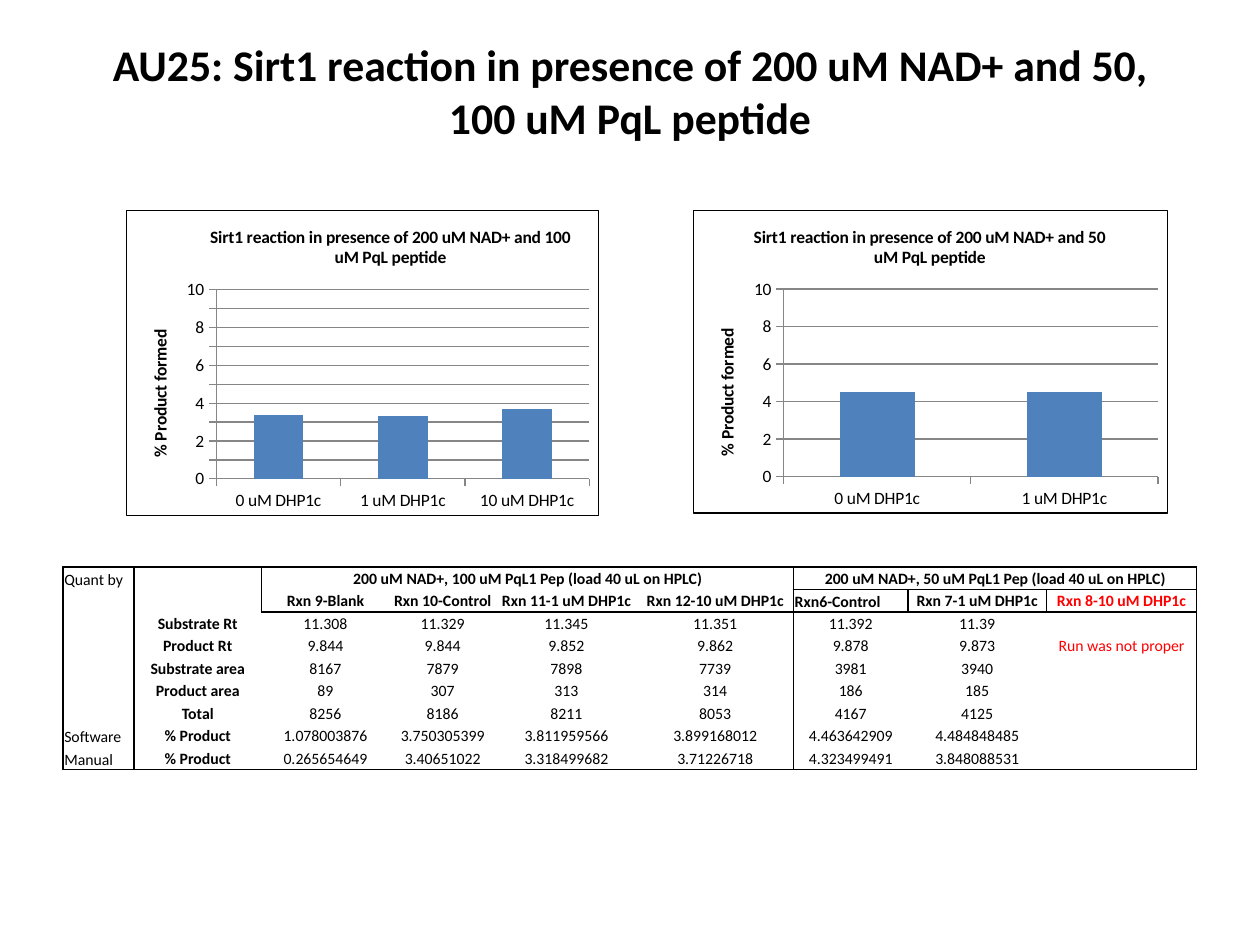
from lxml.etree import SubElement
from pptx import Presentation
from pptx.chart.data import CategoryChartData
from pptx.dml.color import RGBColor
from pptx.enum.chart import XL_CHART_TYPE, XL_TICK_MARK
from pptx.enum.text import MSO_ANCHOR, PP_ALIGN
from pptx.oxml import parse_xml
from pptx.oxml.ns import nsdecls, qn
from pptx.util import Pt

COLORS = {"text": "000000", "alert": "FF0000", "bar": "4F81BD", "grid": "868686"}
PLAIN_TABLE_STYLE = "{2D5ABB26-0587-4C30-8999-92F81FD0307C}"


def set_all(target, values):
    for name, value in values.items():
        setattr(target, name, value)


def set_layout(element, **fractions):
    """Place a chart part by fractions of the chart area."""
    layout = element.find(qn("c:layout"))
    if layout is None:
        layout = parse_xml(f"<c:layout {nsdecls('c')}/>")
        element.insert(0, layout)
    manual = SubElement(layout, qn("c:manualLayout"))
    if "w" in fractions:
        SubElement(manual, qn("c:layoutTarget")).set("val", "inner")
    for name in ("x", "y"):
        SubElement(manual, qn(f"c:{name}Mode")).set("val", "edge")
    for name, value in fractions.items():
        SubElement(manual, qn(f"c:{name}")).set("val", str(value))


def box_edges(boxes):
    """Grid positions of the vertical and horizontal lines around the boxes."""
    vertical, horizontal = set(), set()
    for top, first, bottom, last in boxes:
        vertical |= {(r, c) for r in range(top, bottom + 1) for c in (first, last + 1)}
        horizontal |= {(r, c) for r in (top, bottom + 1) for c in range(first, last + 1)}
    return vertical, horizontal


class SlideBuilder:
    font_name = "Calibri"

    def __init__(self, presentation):
        self.slide = presentation.slides.add_slide(presentation.slide_layouts[5])

    def style(self, font, size, bold=False, color="text"):
        set_all(font, {"name": self.font_name, "size": Pt(size), "bold": bold})
        font.color.rgb = RGBColor.from_string(COLORS[color])

    def title(self, text, left, top, width, height):
        shape = self.slide.shapes.title
        set_all(shape, {"left": Pt(left), "top": Pt(top),
                        "width": Pt(width), "height": Pt(height)})
        frame = shape.text_frame
        frame.text = text
        set_all(frame, {"word_wrap": True, "vertical_anchor": MSO_ANCHOR.MIDDLE,
                        "margin_bottom": Pt(33.6)})
        paragraph = frame.paragraphs[0]
        paragraph.alignment = PP_ALIGN.CENTER
        self.style(paragraph.runs[0].font, 25, bold=True)

    def chart_text(self, title, text):
        title.text_frame.text = text
        self.style(title.text_frame.paragraphs[0].runs[0].font, 10, bold=True)

    def column_chart(self, heading, heading_x, values, left, top, width, height, step=None):
        data = CategoryChartData()
        data.categories = [name for name, _ in values]
        data.add_series("Series 1", [value for _, value in values])
        chart = self.slide.shapes.add_chart(
            XL_CHART_TYPE.COLUMN_CLUSTERED, Pt(left), Pt(top), Pt(width), Pt(height), data).chart
        chart.has_legend = False
        self.style(chart.font, 10)
        self.chart_text(chart.chart_title, heading)

        # Bars
        plot = chart.plots[0]
        set_all(plot, {"gap_width": 150, "vary_by_categories": False})
        fill = plot.series[0].format.fill
        fill.solid()
        fill.fore_color.rgb = RGBColor.from_string(COLORS["bar"])

        # Axes
        axis = chart.value_axis
        set_all(axis, {"minimum_scale": 0, "maximum_scale": 10, "has_major_gridlines": True})
        if step:
            axis.major_unit = step
        self.chart_text(axis.axis_title, "% Product formed")
        for part in (axis, axis.major_gridlines, chart.category_axis):
            part.format.line.color.rgb = RGBColor.from_string(COLORS["grid"])
            part.format.line.width = Pt(0.75)
        for each_axis in (axis, chart.category_axis):
            set_all(each_axis, {"major_tick_mark": XL_TICK_MARK.OUTSIDE,
                                "minor_tick_mark": XL_TICK_MARK.NONE})

        # Placement and frame
        root = chart.element
        set_layout(root.xpath("c:chart/c:title")[0], x=heading_x, y=0.04)
        set_layout(root.xpath(".//c:valAx/c:title")[0], x=0.04, y=0.38)
        set_layout(root.xpath(".//c:plotArea")[0], x=0.19, y=0.26, w=0.79, h=0.62)
        root.find(qn("c:txPr")).addprevious(parse_xml(
            f"<c:spPr {nsdecls('c', 'a')}><a:noFill/><a:ln w='{Pt(0.75)}'><a:solidFill>"
            f"<a:srgbClr val='{COLORS['text']}'/></a:solidFill></a:ln></c:spPr>"))

    def cell(self, cell, text, sides, bold, color, left_aligned):
        set_all(cell, {"margin_left": Pt(0.75), "margin_right": Pt(0.75),
                       "margin_top": Pt(0.75), "margin_bottom": 0,
                       "vertical_anchor": MSO_ANCHOR.BOTTOM if left_aligned else MSO_ANCHOR.MIDDLE})
        paragraph = cell.text_frame.paragraphs[0]
        paragraph.alignment = PP_ALIGN.LEFT if left_aligned else PP_ALIGN.CENTER
        if text:
            run = paragraph.add_run()
            run.text = text
            self.style(run.font, 9, bold, color)
        else:
            SubElement(paragraph._p, qn("a:endParaRPr")).set("sz", "900")
        properties = cell._tc.get_or_add_tcPr()
        ink = f"<a:solidFill><a:srgbClr val='{COLORS['text']}'/></a:solidFill>"
        for side, drawn in sides.items():
            properties.append(parse_xml(
                f"<a:ln{side} {nsdecls('a')} w='{Pt(1)}'>"
                f"{ink if drawn else '<a:noFill/>'}</a:ln{side}>"))
        cell.fill.background()

    def table(self, rows, widths, row_height, left, top, spans, boxes):
        table = self.slide.shapes.add_table(
            len(rows), len(widths), Pt(left), Pt(top),
            Pt(sum(widths)), Pt(row_height * len(rows))).table
        set_all(table, {"first_row": False, "horz_banding": False})
        table._tbl.tblPr.find(qn("a:tableStyleId")).text = PLAIN_TABLE_STYLE
        for column, width in zip(table.columns, widths):
            column.width = Pt(width)
        for row in table.rows:
            row.height = Pt(row_height)
        for row, first, last in spans:
            table.cell(row, first).merge(table.cell(row, last))
        vertical, horizontal = box_edges(boxes)
        for r, texts in enumerate(rows):
            for c, text in enumerate(texts):
                cell = table.cell(r, c)
                end = c + (cell.span_width if cell.is_merge_origin else 1)
                sides = {"L": (r, c) in vertical, "R": (r, end) in vertical,
                         "T": (r, c) in horizontal, "B": (r + 1, c) in horizontal}
                self.cell(cell, text, sides,
                          bold=c == 1 or (r < 2 and c > 0),
                          color="alert" if c == 8 else "text",
                          left_aligned=c == 0 or text == "Rxn6-Control")


ROWS = [
    ["Quant by", "", "200 uM NAD+, 100 uM PqL1 Pep (load 40 uL on HPLC)", "", "", "",
     "200 uM NAD+, 50 uM PqL1 Pep (load 40 uL on HPLC)", "", ""],
    ["", "", "Rxn 9-Blank", "Rxn 10-Control", "Rxn 11-1 uM DHP1c", "Rxn 12-10 uM DHP1c",
     "Rxn6-Control", "Rxn 7-1 uM DHP1c", "Rxn 8-10 uM DHP1c"],
    ["", "Substrate Rt", "11.308", "11.329", "11.345", "11.351", "11.392", "11.39", ""],
    ["", "Product Rt", "9.844", "9.844", "9.852", "9.862", "9.878", "9.873",
     "Run was not proper"],
    ["", "Substrate area", "8167", "7879", "7898", "7739", "3981", "3940", ""],
    ["", "Product area", "89", "307", "313", "314", "186", "185", ""],
    ["", "Total", "8256", "8186", "8211", "8053", "4167", "4125", ""],
    ["Software", "% Product", "1.078003876", "3.750305399", "3.811959566", "3.899168012",
     "4.463642909", "4.484848485", ""],
    ["Manual", "% Product", "0.265654649", "3.40651022", "3.318499682", "3.71226718",
     "4.323499491", "3.848088531", ""],
]
# Outlined blocks: first row, first column, last row, last column
BOXES = [(0, 0, 8, 0), (0, 1, 8, 5), (0, 2, 1, 5), (0, 6, 0, 8),
         (1, 6, 1, 6), (1, 7, 1, 7), (1, 8, 1, 8), (2, 6, 8, 8)]


def main():
    presentation = Presentation()
    set_all(presentation, {"slide_width": Pt(720), "slide_height": Pt(540)})
    builder = SlideBuilder(presentation)
    builder.title("AU25: Sirt1 reaction in presence of 200 uM NAD+ and 50, 100 uM PqL peptide",
                  36, 21.6, 648, 90)

    # Product formed at each peptide concentration
    heading = "Sirt1 reaction in presence of 200 uM NAD+ and {} uM PqL peptide"
    builder.column_chart(heading.format(50), 0.12, [("0 uM DHP1c", 4.5), ("1 uM DHP1c", 4.5)],
                         396, 120, 271.5, 173.5)
    builder.column_chart(heading.format(100), 0.17,
                         [("0 uM DHP1c", 3.4), ("1 uM DHP1c", 3.3), ("10 uM DHP1c", 3.7)],
                         72, 120, 270.5, 175, step=1)

    # HPLC results
    builder.table(ROWS, [40.5, 73, 73, 61, 80.5, 89.5, 65.5, 79, 86], 12.88, 36, 324,
                  spans=[(0, 2, 5), (0, 6, 8)], boxes=BOXES)
    presentation.save("out.pptx")


if __name__ == "__main__":
    main()
